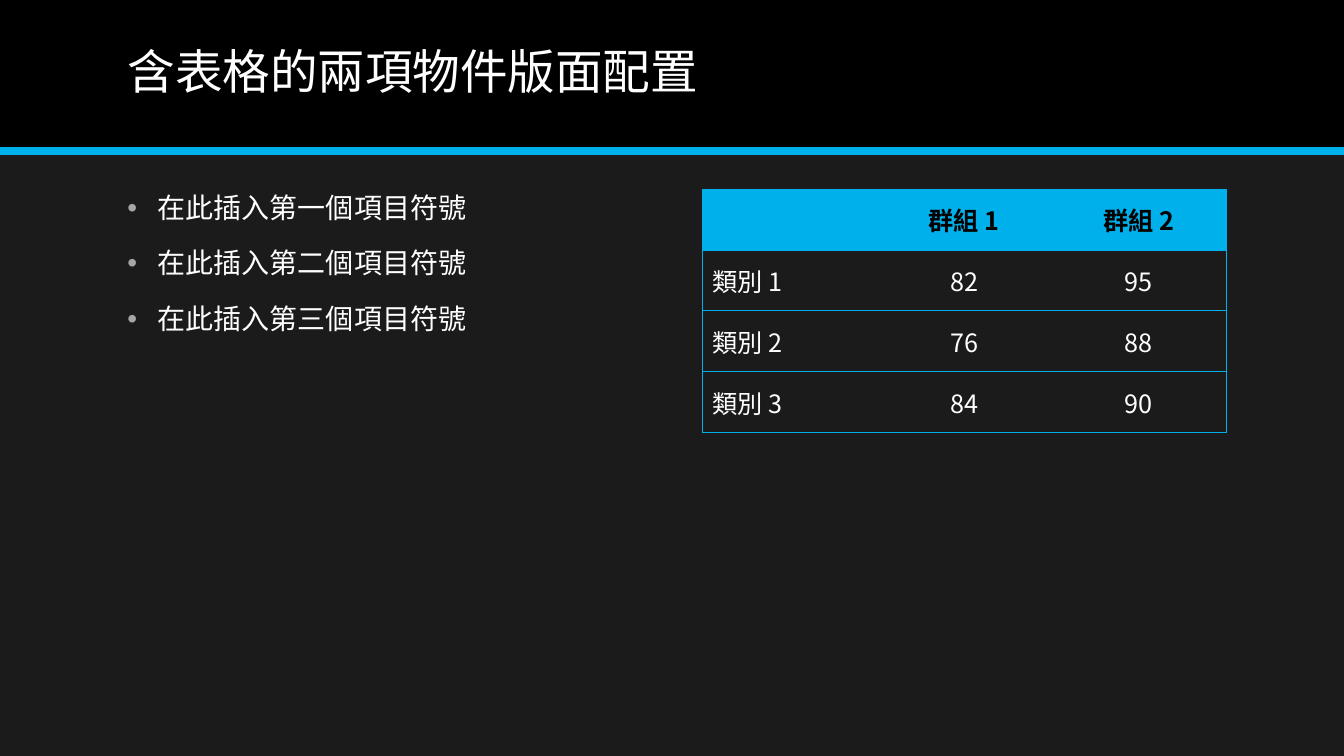
from dataclasses import dataclass

from lxml import etree
from pptx import Presentation
from pptx.dml.color import RGBColor
from pptx.enum import shapes, text
from pptx.oxml import ns
from pptx.util import Pt


@dataclass(frozen=True)
class Theme:
    font: str = "Noto Sans CJK TC"
    background: str = "1B1B1B"
    band: str = "000000"
    accent: str = "00B0EA"
    light: str = "FFFFFF"
    dark: str = "000000"
    bullet: str = "A6A6A6"
    title_size: float = 34
    body_size: float = 20
    table_size: float = 18
    rule_width: float = 6
    border_width: float = 0.5


@dataclass(frozen=True)
class Box:
    left: float
    top: float
    width: float
    height: float

    def lengths(self) -> tuple:
        return Pt(self.left), Pt(self.top), Pt(self.width), Pt(self.height)


@dataclass(frozen=True)
class TextBlock:
    box: Box
    lines: tuple
    size: float
    anchor: text.MSO_ANCHOR
    bulleted: bool = False


THEME = Theme()
SLIDE = Box(0, 0, 960, 540)
BAND = Box(0, 0, 960, 108)
TABLE = Box(501.6, 134.9, 374.4, 174.24)
INDENT = 21.6

BLOCKS = (
    TextBlock(Box(84, 10, 792, 86.4), ("含表格的兩項物件版面配置",),
              THEME.title_size, text.MSO_ANCHOR.MIDDLE),
    TextBlock(Box(84, 135.2, 374.4, 351.4),
              ("在此插入第一個項目符號", "在此插入第二個項目符號", "在此插入第三個項目符號"),
              THEME.body_size, text.MSO_ANCHOR.TOP, bulleted=True),
)

ROWS = (
    ("", "群組 1", "群組 2"),
    ("類別 1", "82", "95"),
    ("類別 2", "76", "88"),
    ("類別 3", "84", "90"),
)


def rgb(color: str) -> RGBColor:
    return RGBColor.from_string(color)


def sub(parent, tag: str, **attrs: str):
    return etree.SubElement(parent, ns.qn(tag), attrs)


def format_runs(p, size: float, color: str, bold: bool = False) -> None:
    for r in p.runs:
        r.font.name = THEME.font
        r.font.size = Pt(size)
        r.font.bold = bold
        r.font.color.rgb = rgb(color)
        sub(r.font._element, "a:ea", typeface=THEME.font)


def add_bullet(p) -> None:
    p.space_before = Pt(18)
    pPr = p._p.get_or_add_pPr()
    pPr.set("marL", str(Pt(INDENT)))
    pPr.set("indent", str(-Pt(INDENT)))
    sub(sub(pPr, "a:buClr"), "a:srgbClr", val=THEME.bullet)
    sub(pPr, "a:buFont", typeface="Arial")
    sub(pPr, "a:buChar", char="•")


def add_text(s, block: TextBlock) -> None:
    tf = s.shapes.add_textbox(*block.box.lengths()).text_frame
    tf.word_wrap = True
    tf.vertical_anchor = block.anchor
    tf.text = "\n".join(block.lines)
    for p in tf.paragraphs:
        p.line_spacing = 0.9
        format_runs(p, block.size, THEME.light)
        if block.bulleted:
            add_bullet(p)


def add_header_band(s) -> None:
    sp = s.shapes.add_shape(shapes.MSO_SHAPE.RECTANGLE, *BAND.lengths())
    sp.shadow.inherit = False
    sp.fill.solid()
    sp.fill.fore_color.rgb = rgb(THEME.band)
    sp.line.fill.background()

    rule = s.shapes.add_connector(shapes.MSO_CONNECTOR.STRAIGHT, Pt(0), Pt(BAND.height),
                                  Pt(BAND.width), Pt(BAND.height))
    rule.line.color.rgb = rgb(THEME.accent)
    rule.line.width = Pt(THEME.rule_width)
    sub(rule._element.spPr, "a:effectLst")


def set_borders(cell, sides: str) -> None:
    """Draw the named sides (L, R, T, B) and clear the others."""
    tcPr = cell._tc.get_or_add_tcPr()
    for side in "LRTB":
        ln = sub(tcPr, f"a:ln{side}", w=str(Pt(THEME.border_width)))
        if side in sides:
            sub(sub(ln, "a:solidFill"), "a:srgbClr", val=THEME.accent)
        else:
            sub(ln, "a:noFill")


def fill_cell(cell, value: str, header: bool, first: bool, last: bool) -> None:
    set_borders(cell, "TB" + "L" * first + "R" * last)
    if header:
        cell.fill.solid()
        cell.fill.fore_color.rgb = rgb(THEME.accent)
    else:
        cell.fill.background()
    cell.vertical_anchor = text.MSO_ANCHOR.MIDDLE
    p = cell.text_frame.paragraphs[0]
    p.text = value
    p.alignment = text.PP_ALIGN.LEFT if first else text.PP_ALIGN.CENTER
    format_runs(p, THEME.table_size, THEME.dark if header else THEME.light, header)


def add_score_table(s) -> None:
    n_rows, n_cols = len(ROWS), len(ROWS[0])
    table = s.shapes.add_table(n_rows, n_cols, *TABLE.lengths()).table
    table.horz_banding = False
    for column in table.columns:
        column.width = Pt(TABLE.width / n_cols)
    for i, values in enumerate(ROWS):
        table.rows[i].height = Pt(TABLE.height / n_rows)
        for j, value in enumerate(values):
            fill_cell(table.cell(i, j), value, i == 0, j == 0, j == n_cols - 1)


def main() -> None:
    prs = Presentation()
    prs.slide_width, prs.slide_height = Pt(SLIDE.width), Pt(SLIDE.height)
    s = prs.slides.add_slide(prs.slide_layouts[6])
    s.background.fill.solid()
    s.background.fill.fore_color.rgb = rgb(THEME.background)

    # Header band with its accent rule
    add_header_band(s)
    # Title and bullet list
    for block in BLOCKS:
        add_text(s, block)
    # Table of groups by category
    add_score_table(s)

    prs.save("out.pptx")


if __name__ == "__main__":
    main()
